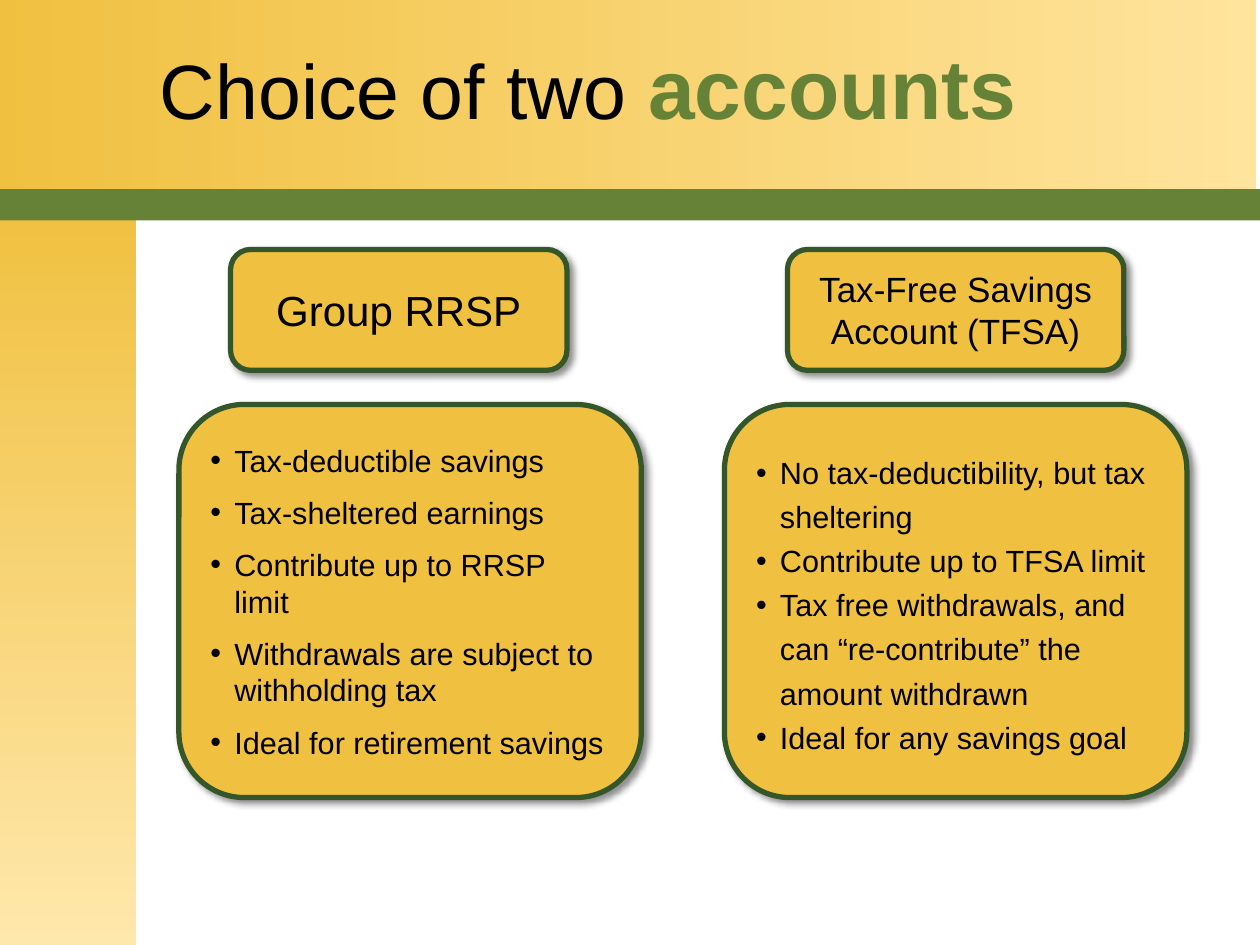
from dataclasses import dataclass

from lxml import etree
from pptx import Presentation
from pptx.dml.color import RGBColor
from pptx.enum import shapes, text
from pptx.oxml import ns
from pptx.util import Inches, Pt

COLORS = {
    "gold": "F0C040",
    "pale_gold": "FFE49D",
    "cream": "FFE8AC",
    "green": "658237",
    "dark_green": "345629",
    "black": "000000",
}
FONT = "Arial"
HEADING_SIZE = (2.67, 0.96)
BENEFITS_SIZE = (3.67, 3.12)
HEADING_TOP, BENEFITS_TOP = 1.98, 3.21
BULLET_INDENT = 0.19


@dataclass
class Account:
    name: str
    name_size: float
    heading_left: float
    benefits_left: float
    benefits: list[str]
    space_before: float = 0
    line_spacing: float = 1.0


ACCOUNTS = [
    Account("Group RRSP", 24, 1.83, 1.42, [
        "Tax-deductible savings",
        "Tax-sheltered earnings",
        "Contribute up to RRSP limit",
        "Withdrawals are subject to withholding tax",
        "Ideal for retirement savings",
    ], space_before=8.75),
    Account("Tax-Free Savings Account (TFSA)", 20, 6.25, 5.75, [
        "No tax-deductibility, but tax sheltering",
        "Contribute up to TFSA limit",
        "Tax free withdrawals, and can “re-contribute” the amount withdrawn",
        "Ideal for any savings goal",
    ], line_spacing=1.2),
]


def color(name: str) -> RGBColor:
    return RGBColor.from_string(COLORS[name])


def style_font(font, size: float, color_name: str = "black", bold: bool = False) -> None:
    font.name, font.size, font.bold = FONT, Pt(size), bold
    font.color.rgb = color(color_name)


def add_band(slide, left: float, top: float, width: float, height: float):
    band = slide.shapes.add_shape(
        shapes.MSO_SHAPE.RECTANGLE,
        Inches(left), Inches(top), Inches(width), Inches(height))
    band.shadow.inherit = False
    band.line.fill.background()
    return band


def fill_gradient(band, start: str, end: str, angle: float) -> None:
    """Fade from start to end; the angle runs counter-clockwise."""
    band.fill.gradient()
    band.fill.gradient_angle = angle
    for stop, name in zip(band.fill.gradient_stops, (start, end)):
        stop.color.rgb = color(name)


def add_shadow(card) -> None:
    """Cast a soft black shadow to the lower right."""
    card.shadow.inherit = False
    effects = card.fill._xPr.find(ns.qn("a:effectLst"))
    shadow = etree.SubElement(
        effects, ns.qn("a:outerShdw"), blurRad=str(Pt(4)), dist=str(Pt(3)),
        dir=str(45 * 60000), algn="tl", rotWithShape="0")
    tint = etree.SubElement(shadow, ns.qn("a:srgbClr"), val=COLORS["black"])
    etree.SubElement(tint, ns.qn("a:alpha"), val="43000")


def add_card(slide, left: float, top: float, size: tuple[float, float]):
    card = slide.shapes.add_shape(
        shapes.MSO_SHAPE.ROUNDED_RECTANGLE,
        Inches(left), Inches(top), *map(Inches, size))
    card.fill.solid()
    card.fill.fore_color.rgb = color("gold")
    card.line.color.rgb = color("dark_green")
    card.line.width = Pt(3)
    add_shadow(card)
    card.text_frame.word_wrap = True
    card.text_frame.vertical_anchor = text.MSO_ANCHOR.MIDDLE
    return card


def add_bullet(paragraph) -> None:
    properties = paragraph._p.get_or_add_pPr()
    properties.set("marL", str(Inches(BULLET_INDENT)))
    properties.set("indent", str(-Inches(BULLET_INDENT)))
    etree.SubElement(properties, ns.qn("a:buFont"), typeface=FONT)
    etree.SubElement(properties, ns.qn("a:buChar"), char="•")


def add_heading(slide, account: Account) -> None:
    heading = add_card(slide, account.heading_left, HEADING_TOP, HEADING_SIZE)
    heading.text_frame.text = account.name
    name = heading.text_frame.paragraphs[0]
    name.alignment = text.PP_ALIGN.CENTER
    style_font(name.runs[0].font, account.name_size)


def add_benefits(slide, account: Account) -> None:
    card = add_card(slide, account.benefits_left, BENEFITS_TOP, BENEFITS_SIZE)
    card.text_frame.margin_right = Inches(0.13)
    card.text_frame.text = "\n".join(account.benefits)
    for benefit in card.text_frame.paragraphs:
        benefit.alignment = text.PP_ALIGN.LEFT
        benefit.line_spacing = account.line_spacing
        benefit.space_before = Pt(account.space_before)
        add_bullet(benefit)
        style_font(benefit.runs[0].font, 17.5)


def add_title(slide) -> None:
    title = slide.shapes.add_textbox(Inches(0.42), 0, Inches(8.5), Inches(1.36))
    title.text_frame.word_wrap = True
    title.text_frame.vertical_anchor = text.MSO_ANCHOR.MIDDLE
    line = title.text_frame.paragraphs[0]
    line.alignment = text.PP_ALIGN.CENTER
    for words, size, color_name, bold in (
            ("Choice of two ", 44, "black", False),
            ("accounts", 48, "green", True)):
        run = line.add_run()
        run.text = words
        style_font(run.font, size, color_name, bold)


def main() -> None:
    deck = Presentation()
    deck.slide_width, deck.slide_height = Inches(10), Inches(7.5)
    slide = deck.slides.add_slide(deck.slide_layouts[6])

    header = add_band(slide, -0.03, 0, 10, 1.5)
    fill_gradient(header, "gold", "pale_gold", 0)
    sidebar = add_band(slide, 0, 1.67, 1.08, 5.83)
    fill_gradient(sidebar, "gold", "cream", 270)
    add_title(slide)
    for account in ACCOUNTS:
        add_heading(slide, account)
        add_benefits(slide, account)
    divider = add_band(slide, 0, 1.5, 10, 0.25)
    divider.fill.solid()
    divider.fill.fore_color.rgb = color("green")

    deck.save("out.pptx")


if __name__ == "__main__":
    main()
